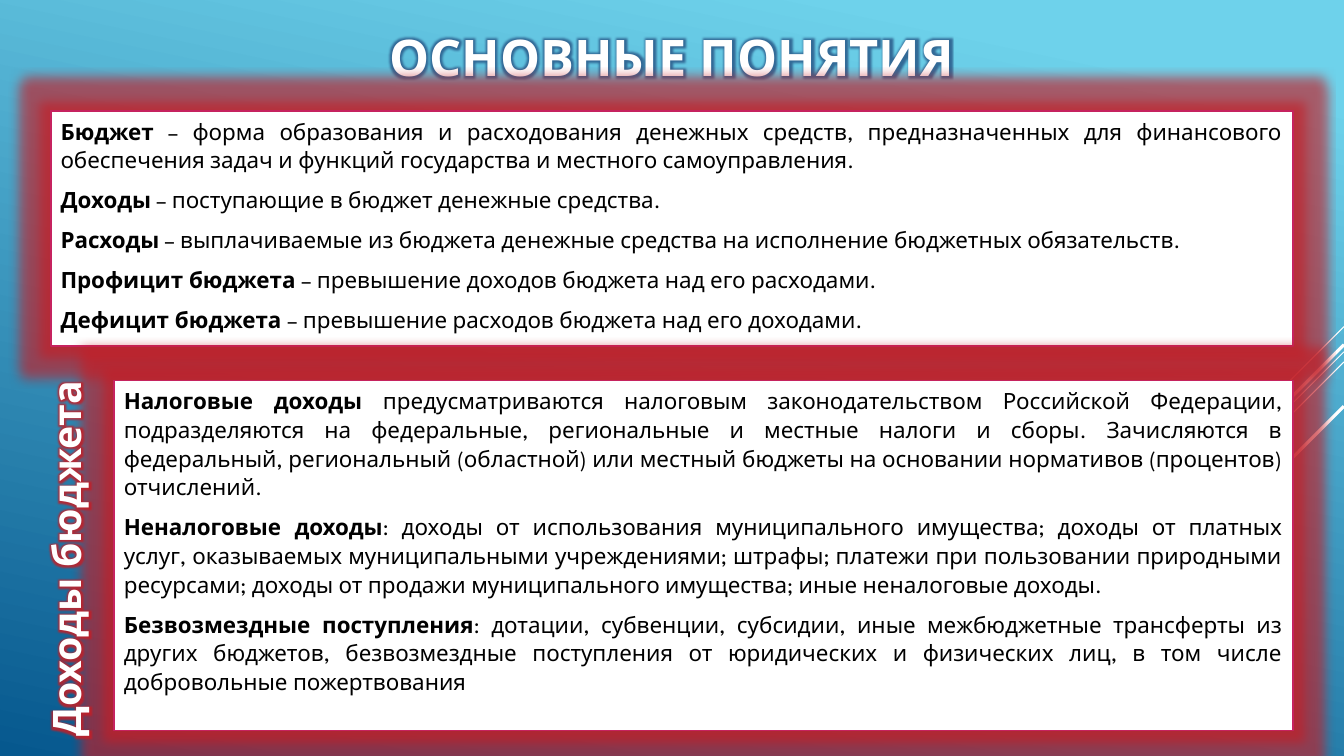
from lxml import etree
from pptx import Presentation
from pptx.dml.color import RGBColor
from pptx.enum.shapes import MSO_CONNECTOR, MSO_SHAPE
from pptx.enum.text import MSO_ANCHOR, MSO_AUTO_SIZE, PP_ALIGN
from pptx.oxml.ns import qn
from pptx.util import Pt

STRAIGHT = MSO_CONNECTOR.STRAIGHT
RECTANGLE = MSO_SHAPE.RECTANGLE
TOP, MIDDLE = MSO_ANCHOR.TOP, MSO_ANCHOR.MIDDLE
NO_AUTOFIT = MSO_AUTO_SIZE.NONE
LEFT, CENTER, JUSTIFY = PP_ALIGN.LEFT, PP_ALIGN.CENTER, PP_ALIGN.JUSTIFY

WHITE = RGBColor(0xFF, 0xFF, 0xFF)
BLACK = RGBColor(0x00, 0x00, 0x00)
SKY = RGBColor(0x6E, 0xD2, 0xEB)
NAVY = RGBColor(0x06, 0x58, 0x8E)
CRIMSON = RGBColor(0xC6, 0x23, 0x5F)
RED_GLOW = RGBColor(0xC4, 0x1E, 0x26)
BLUE_GLOW = RGBColor(0x2A, 0x5A, 0x8A)

FONT = "League Spartan"
SLIDE_WIDTH, SLIDE_HEIGHT = 960, 540

RAYS = [
    (233.3, 72, 0.75),
    (251.3, 234.7, 0.75),
    (258.5, 149, 0.75),
    (246.2, 137.5, 2.25),
    (290.2, 100, 2.25),
]

CONCEPTS = [
    ("Бюджет", " – форма образования и расходования денежных средств, предназначенных для "
     "финансового обеспечения задач и функций государства и местного самоуправления."),
    ("Доходы", " – поступающие в бюджет денежные средства."),
    ("Расходы", " – выплачиваемые из бюджета денежные средства на исполнение бюджетных "
     "обязательств."),
    ("Профицит бюджета ", "– превышение доходов бюджета над его расходами."),
    ("Дефицит бюджета ", "– превышение расходов бюджета над его доходами."),
]

REVENUES = [
    ("Налоговые доходы ", "предусматриваются налоговым законодательством Российской Федерации, "
     "подразделяются на федеральные, региональные и местные налоги и сборы. Зачисляются в "
     "федеральный, региональный (областной) или местный бюджеты на основании нормативов "
     "(процентов) отчислений."),
    ("Неналоговые доходы", ": доходы от использования муниципального имущества; доходы от "
     "платных услуг, оказываемых муниципальными учреждениями; штрафы; платежи при пользовании "
     "природными ресурсами; доходы от продажи муниципального имущества; иные неналоговые доходы."),
    ("Безвозмездные поступления", ": дотации, субвенции, субсидии, иные межбюджетные трансферты "
     "из других бюджетов, безвозмездные поступления от юридических и физических лиц, в том числе "
     "добровольные пожертвования"),
]


def apply_format(target, values):
    for name, value in values.items():
        setattr(target, name, value)


def add_glow(effects, color, radius, opacity):
    glow = etree.SubElement(effects, qn("a:glow"), rad=str(Pt(radius)))
    tint = etree.SubElement(glow, qn("a:srgbClr"), val=str(color))
    etree.SubElement(tint, qn("a:alpha"), val=str(opacity * 1000))


def add_run(paragraph, text, size, color, bold):
    run = paragraph.add_run()
    run.text = text
    apply_format(run.font, {"name": FONT, "size": Pt(size), "bold": bold})
    run.font.color.rgb = color
    return run


def paint_background(slide):
    fill = slide.background.fill
    fill.gradient()
    fill.gradient_angle = 258
    for stop, color, position in zip(fill.gradient_stops, (SKY, NAVY), (0.1, 1)):
        stop.color.rgb = color
        stop.position = position


def add_ray(slide, top, reach, weight):
    ray = slide.shapes.add_connector(
        STRAIGHT, Pt(SLIDE_WIDTH), Pt(top), Pt(SLIDE_WIDTH - reach), Pt(top + reach))
    ray.line.color.rgb = WHITE
    ray.line.width = Pt(weight)
    etree.SubElement(ray._element.spPr, qn("a:effectLst"))


def add_heading(slide, text, bounds, size, align, glow, rotation=0):
    heading = slide.shapes.add_textbox(*map(Pt, bounds))
    heading.rotation = rotation
    frame = heading.text_frame
    apply_format(frame, {"word_wrap": True, "auto_size": NO_AUTOFIT, "vertical_anchor": MIDDLE})
    paragraph = frame.paragraphs[0]
    paragraph.alignment = align
    run = add_run(paragraph, text, size, WHITE, True)
    effects = etree.Element(qn("a:effectLst"))
    run.font._element.find(qn("a:solidFill")).addnext(effects)
    add_glow(effects, glow, 8, 85)


def add_definitions(slide, entries, bounds):
    panel = slide.shapes.add_shape(RECTANGLE, *map(Pt, bounds))
    panel.shadow.inherit = False
    panel.fill.solid()
    panel.fill.fore_color.rgb = WHITE
    panel.line.color.rgb = CRIMSON
    panel.line.width = Pt(1.25)
    add_glow(panel._element.spPr.find(qn("a:effectLst")), RED_GLOW, 15, 65)
    frame = panel.text_frame
    apply_format(frame, {"word_wrap": True, "auto_size": NO_AUTOFIT, "vertical_anchor": TOP})
    for index, (term, meaning) in enumerate(entries):
        paragraph = frame.add_paragraph() if index else frame.paragraphs[0]
        apply_format(paragraph, {"alignment": JUSTIFY, "line_spacing": 1.07, "space_after": Pt(8)})
        add_run(paragraph, term, 16, BLACK, True)
        add_run(paragraph, meaning, 16, BLACK, False)


def main():
    deck = Presentation()
    apply_format(deck, {"slide_width": Pt(SLIDE_WIDTH), "slide_height": Pt(SLIDE_HEIGHT)})
    slide = deck.slides.add_slide(deck.slide_layouts[6])
    paint_background(slide)
    for ray in RAYS:
        add_ray(slide, *ray)
    add_heading(slide, "ОСНОВНЫЕ ПОНЯТИЯ", (0, 7.2, SLIDE_WIDTH, 65.5), 36, CENTER, BLUE_GLOW)
    add_definitions(slide, CONCEPTS, (36.2, 79.2, 887.2, 167.8))
    add_definitions(slide, REVENUES, (81.4, 271.8, 842, 250))
    add_heading(slide, "Доходы бюджета", (-89.3, 376.6, 272.2, 41), 28, LEFT, RED_GLOW, 270)
    deck.save("out.pptx")


if __name__ == "__main__":
    main()
